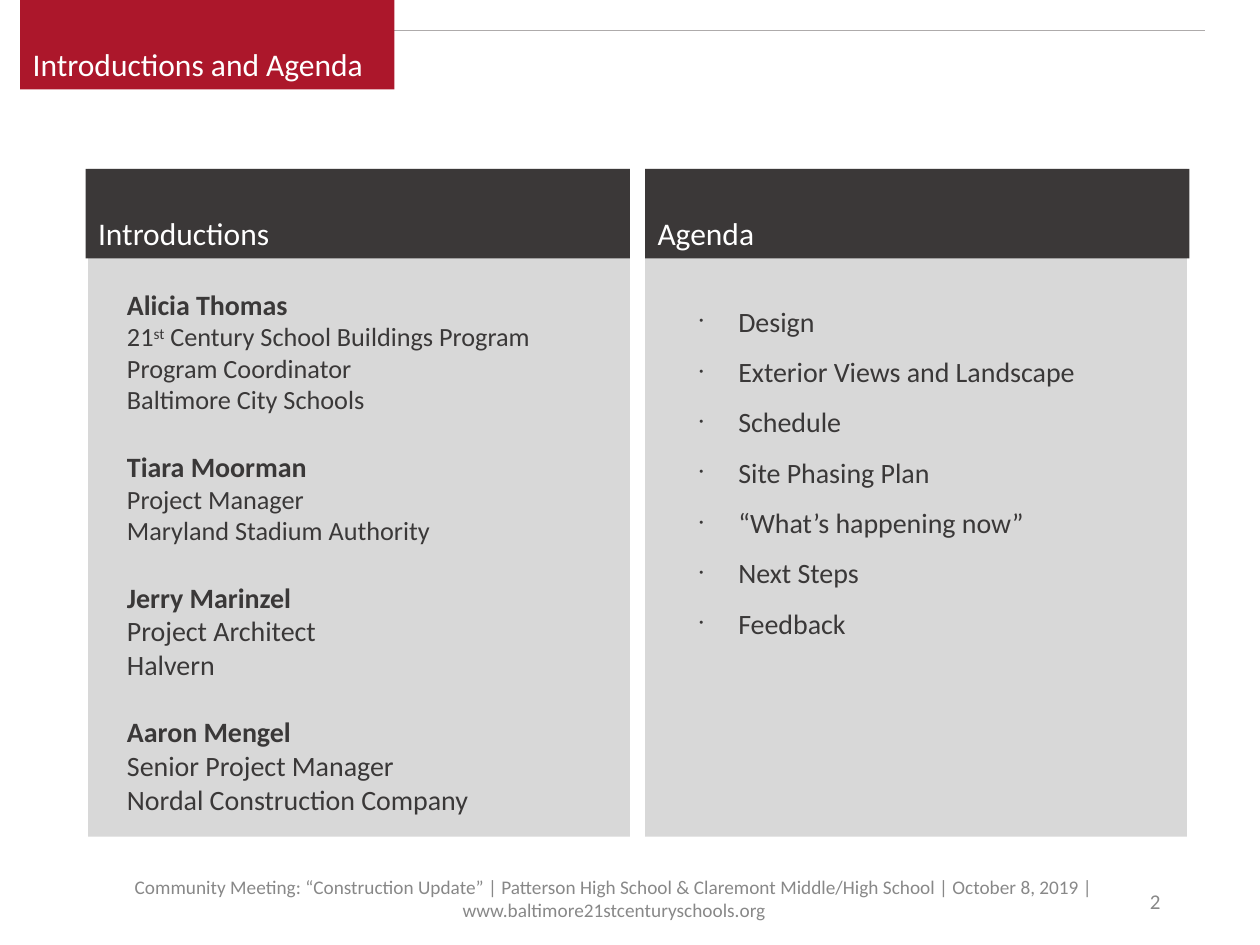
from pptx import Presentation, util as u
from pptx.dml.color import RGBColor
from pptx.enum import shapes as sh, text as tx
from pptx.oxml import parse_xml
from pptx.oxml.ns import nsdecls

TITLE = "Introductions and Agenda"
HEADS = ["Introductions", "Agenda"]
TEAM = [
    ("Alicia Thomas", 15, ["21^st^ Century School Buildings Program",
                           "Program Coordinator", "Baltimore City Schools"]),
    ("Tiara Moorman", 15, ["Project Manager", "Maryland Stadium Authority"]),
    ("Jerry Marinzel", 16, ["Project Architect", "Halvern"]),
    ("Aaron Mengel", 16, ["Senior Project Manager",
                          "Nordal Construction Company"]),
]
AGENDA = ["Design", "Exterior Views and Landscape", "Schedule",
          "Site Phasing Plan", "“What’s happening now”", "Next Steps",
          "Feedback"]
FOOT = ("Community Meeting: “Construction Update” | Patterson High School & "
        "Claremont Middle/High School | October 8, 2019 | "
        "www.baltimore21stcenturyschools.org")
PAGE = "2"

THEME = dict(font="Calibri", red="AC172B", dark="3B3838", ink="3A3838",
             panel="D8D8D8", rule="AEABAB", mute="888888", white="FFFFFF",
             head=18, name=16, num=12, foot=11)
W, H = 10, 7.5
TOP, BAND, TALL = 1.34, 0.71, 5.3
COLS = [0.68, 5.12]
WIDE, BODY = 4.32, 4.3
TEXT_Y, TEXT_H = 2.23, 4.42
GAP = 19.5
PLAIN = dict(space_before=u.Pt(0), space_after=u.Pt(0))


def rgb(key):
    return RGBColor.from_string(THEME[key])


def put(obj, vals):
    for key, val in vals.items():
        setattr(obj, key, val)


def place(shape, x, y, w, h):
    put(shape, dict(left=u.Inches(x), top=u.Inches(y),
                    width=u.Inches(w), height=u.Inches(h)))


def frame(shape, anchor=tx.MSO_ANCHOR.TOP, pad=0.05):
    put(shape.text_frame, dict(
        word_wrap=True, auto_size=tx.MSO_AUTO_SIZE.NONE,
        vertical_anchor=anchor,
        margin_left=u.Inches(0.1), margin_right=u.Inches(0.1),
        margin_top=u.Inches(pad), margin_bottom=u.Inches(pad)))
    return shape.text_frame


def para(box, line, size, tone, bold=False, **form):
    part = box.paragraphs[0]
    if part.runs:
        part = box.add_paragraph()
    put(part, {**PLAIN, **form})
    for i, bit in enumerate(line.split("^")):
        run = part.add_run()
        run.text = bit
        put(run.font, dict(name=THEME["font"], size=u.Pt(size), bold=bold))
        run.font.color.rgb = rgb(tone)
        if i % 2:
            run.font._element.set("baseline", "30000")
    return part


def paint(shape, tone):
    shape.fill.solid()
    shape.fill.fore_color.rgb = rgb(tone)
    shape.line.fill.background()


def block(x, y, w, h, tone):
    shape = slide.shapes.add_shape(sh.MSO_SHAPE.RECTANGLE, 0, 0, 0, 0)
    place(shape, x, y, w, h)
    shape.shadow.inherit = False
    paint(shape, tone)
    return shape


def head(shape, line):
    para(frame(shape, tx.MSO_ANCHOR.BOTTOM), line, THEME["head"], "white",
         alignment=tx.PP_ALIGN.LEFT)


def label(line, size, side, pad, *at):
    shape = slide.shapes.add_textbox(0, 0, 0, 0)
    place(shape, *at)
    para(frame(shape, tx.MSO_ANCHOR.MIDDLE, pad), line, size, "mute",
         alignment=side)


def bullet(part):
    props = part._p.get_or_add_pPr()
    props.set("marL", str(u.Inches(0.31)))
    props.set("indent", str(-u.Inches(0.31)))
    for xml in (f'<a:buClr {nsdecls("a")}><a:srgbClr val="{THEME["ink"]}"/>'
                '</a:buClr>',
                f'<a:buSzPct {nsdecls("a")} val="41000"/>',
                f'<a:buFont {nsdecls("a")} typeface="Arial"/>',
                f'<a:buChar {nsdecls("a")} char="•"/>'):
        props.append(parse_xml(xml))


deck = Presentation()
put(deck, dict(slide_width=u.Inches(W), slide_height=u.Inches(H)))
slide = deck.slides.add_slide(deck.slide_layouts[1])
title, body = slide.placeholders
tree = slide.shapes.element

for x in (COLS[0] + WIDE - BODY, COLS[1]):
    block(x, TOP, BODY, TALL, "panel")

rule = slide.shapes.add_connector(
    sh.MSO_CONNECTOR.STRAIGHT, *map(u.Inches, (0.44, 0.24, W - 0.44, 0.24)))
rule.line.color.rgb = rgb("rule")
rule.line.width = u.Pt(0.75)
rule._element.spPr.append(parse_xml(f'<a:effectLst {nsdecls("a")}/>'))

tree.append(title.element)
place(title, 0.16, 0, 2.97, BAND)
paint(title, "red")
head(title, TITLE)

tree.append(body.element)
place(body, 5.45, TEXT_Y, 3.85, TEXT_H)
box = frame(body)
for item in AGENDA:
    bullet(para(box, item, THEME["name"], "ink", line_spacing=1.5))

team = slide.shapes.add_textbox(0, 0, 0, 0)
place(team, 0.91, TEXT_Y, 3.77, TEXT_H)
box = frame(team)
for i, (name, size, lines) in enumerate(TEAM):
    para(box, name, THEME["name"], "ink", True,
         space_before=u.Pt(GAP if i else 0))
    for line in lines:
        para(box, line, size, "ink")

for x, line in zip(COLS, HEADS):
    head(block(x, TOP, WIDE, BAND, "dark"), line)

label(PAGE, THEME["num"], tx.PP_ALIGN.RIGHT, 0.05, 7.06, 6.95, 2.25, 0.4)
label(FOOT, THEME["foot"], tx.PP_ALIGN.CENTER, 0.1, 0.31, 6.93, 9.13, 0.4)

deck.save("out.pptx")
